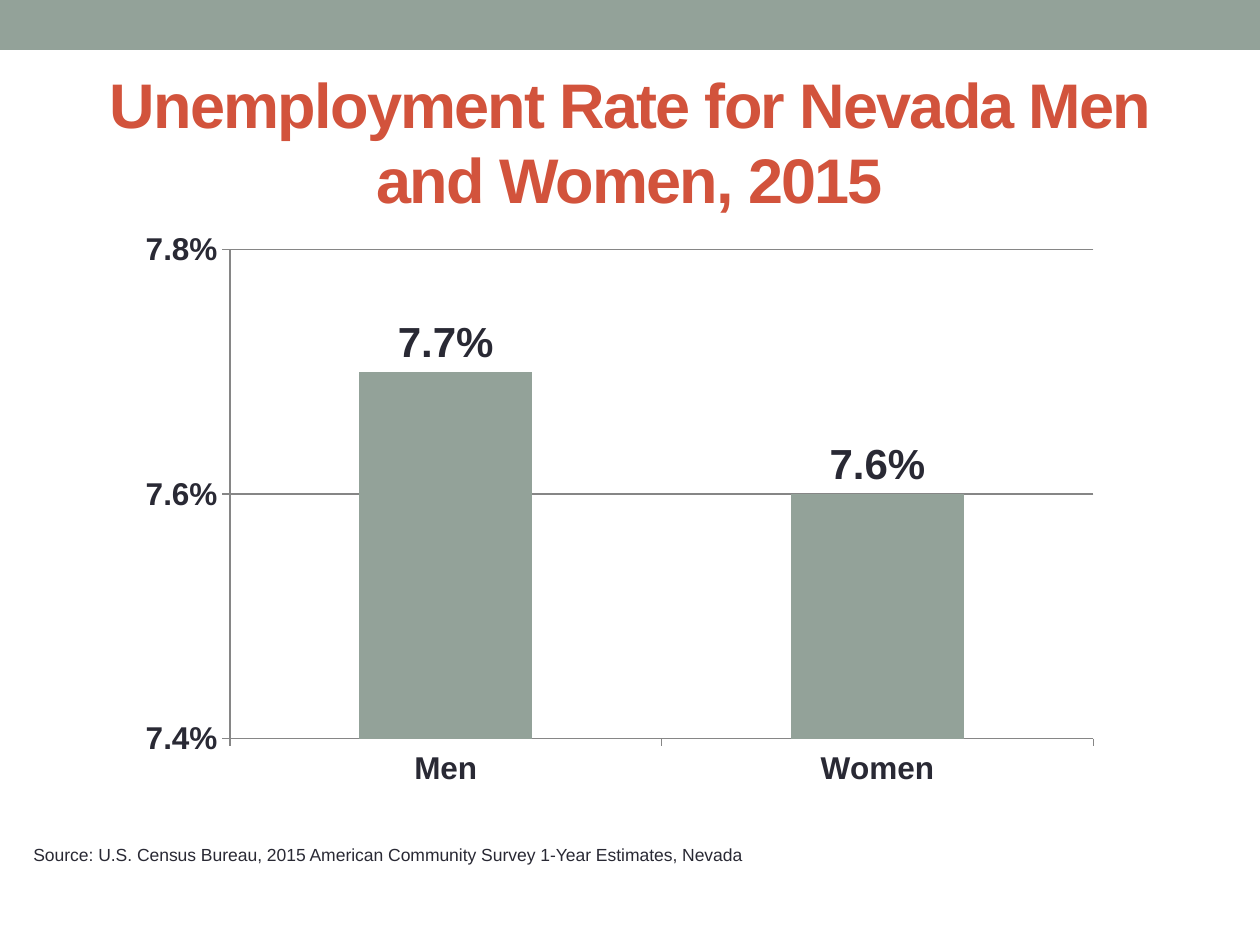
from pptx import Presentation
from pptx.chart.data import CategoryChartData
from pptx.dml.color import RGBColor
from pptx.enum.chart import XL_CHART_TYPE, XL_LABEL_POSITION, XL_TICK_MARK
from pptx.enum.shapes import MSO_SHAPE
from pptx.enum.text import MSO_ANCHOR, PP_ALIGN
from pptx.util import Emu, Pt

TITLE = "Unemployment Rate for Nevada Men and Women, 2015"
SOURCE = "Source: U.S. Census Bureau, 2015 American Community Survey 1-Year Estimates, Nevada"
RATES = {"Men": 0.077, "Women": 0.076}
PERCENT = "0.0%"

FONT = "Arial"
SAGE = RGBColor(0x93, 0xA2, 0x99)
RED = RGBColor(0xD2, 0x53, 0x3C)
INK = RGBColor(0x29, 0x29, 0x34)
GRAY = RGBColor(0x86, 0x86, 0x86)

BAND_BOX = (0, 0, 1260, 50)
TITLE_BOX = (63, 73, 1134, 136)
CHART_BOX = (126, 220, 987, 578)
SOURCE_BOX = (21, 838, 1144, 34)


def px(length):
    return Emu(round(length * 914400 / 126))


def place(box):
    return [px(length) for length in box]


def style_font(font, size, color, bold=False):
    font.name = FONT
    font.size = Pt(size)
    font.bold = bold
    font.color.rgb = color


def add_text(slide, box, text, size, color, bold=False, align=PP_ALIGN.LEFT, anchor=MSO_ANCHOR.TOP):
    frame = slide.shapes.add_textbox(*place(box)).text_frame
    frame.word_wrap = True
    frame.vertical_anchor = anchor
    paragraph = frame.paragraphs[0]
    paragraph.alignment = align
    run = paragraph.add_run()
    run.text = text
    style_font(run.font, size, color, bold)
    return run


def add_rate_chart(slide):
    data = CategoryChartData(number_format=PERCENT)
    data.categories = list(RATES)
    data.add_series("Series 1", list(RATES.values()))
    chart = slide.shapes.add_chart(XL_CHART_TYPE.COLUMN_CLUSTERED, *place(CHART_BOX), data).chart
    chart.has_legend = False
    chart.has_title = False
    style_font(chart.font, 18, INK)

    for axis in (chart.category_axis, chart.value_axis):
        axis.major_tick_mark = XL_TICK_MARK.OUTSIDE
        axis.format.line.color.rgb = GRAY
        style_font(axis.tick_labels.font, 18, INK, True)

    value_axis = chart.value_axis
    value_axis.minimum_scale = 0.074
    value_axis.maximum_scale = 0.078
    value_axis.major_unit = 0.002
    value_axis.has_major_gridlines = True
    value_axis.major_gridlines.format.line.color.rgb = GRAY
    value_axis.tick_labels.number_format = PERCENT
    value_axis.tick_labels.number_format_is_linked = False

    plot = chart.plots[0]
    plot.gap_width = 150
    plot.vary_by_categories = False
    series = plot.series[0]
    series.format.fill.solid()
    series.format.fill.fore_color.rgb = SAGE
    labels = series.data_labels
    labels.show_value = True
    labels.position = XL_LABEL_POSITION.OUTSIDE_END
    labels.number_format = PERCENT
    labels.number_format_is_linked = False
    style_font(labels.font, 24, INK, True)


def main():
    presentation = Presentation()
    presentation.slide_width = px(1260)
    presentation.slide_height = px(945)
    slide = presentation.slides.add_slide(presentation.slide_layouts[6])

    band = slide.shapes.add_shape(MSO_SHAPE.RECTANGLE, *place(BAND_BOX))
    band.shadow.inherit = False
    band.fill.solid()
    band.fill.fore_color.rgb = SAGE
    band.line.fill.background()

    title = add_text(slide, TITLE_BOX, TITLE, 36, RED, True, PP_ALIGN.CENTER, MSO_ANCHOR.MIDDLE)
    title.font._element.set("spc", "-100")
    add_rate_chart(slide)
    add_text(slide, SOURCE_BOX, SOURCE, 10, INK)
    presentation.save("out.pptx")


if __name__ == "__main__":
    main()
